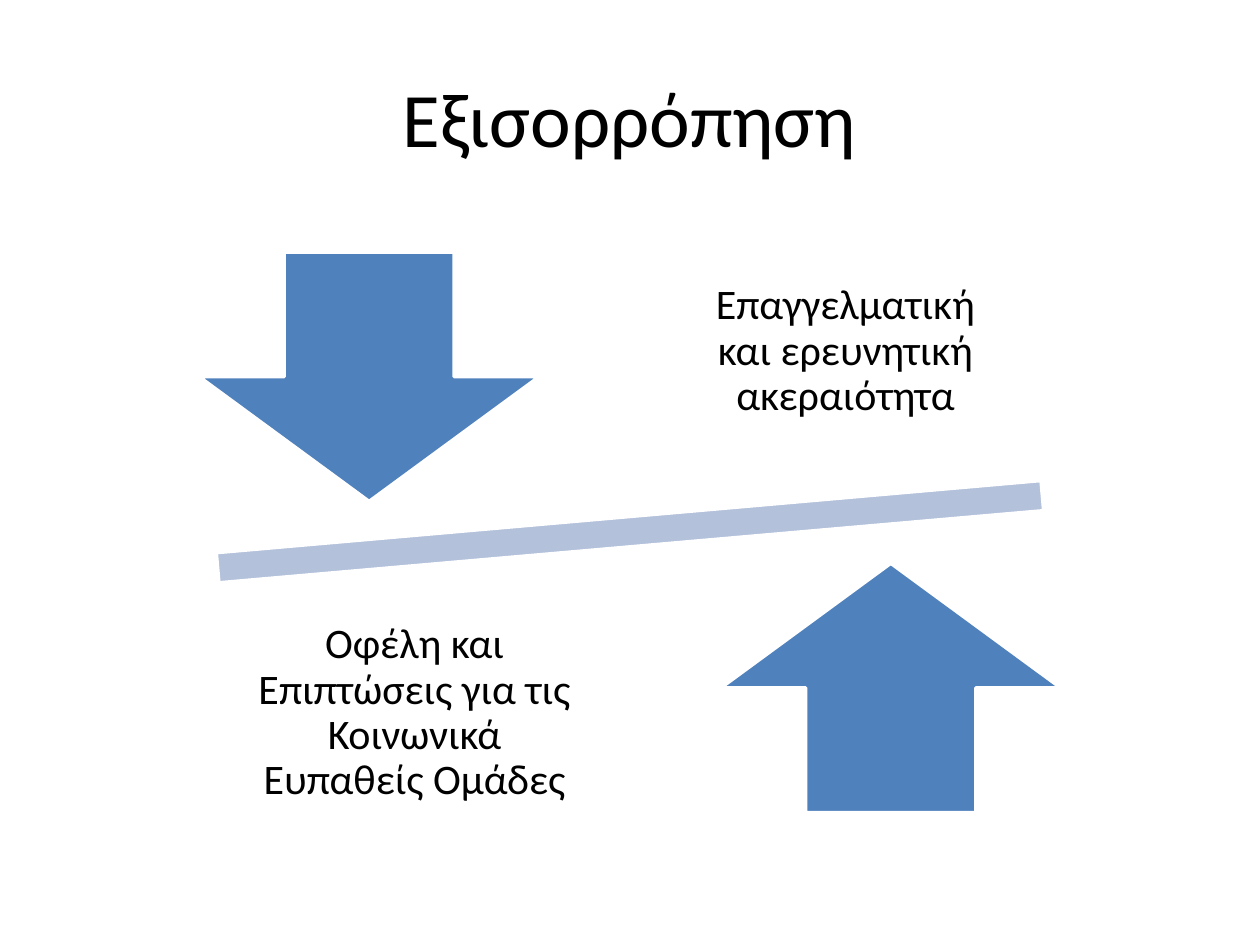
from dataclasses import dataclass

from pptx import Presentation
from pptx.dml.color import RGBColor
from pptx.enum.shapes import MSO_SHAPE
from pptx.enum.text import MSO_ANCHOR, PP_ALIGN
from pptx.slide import Slide
from pptx.util import Inches, Pt

COLORS = {"arrow": "4F81BD", "beam": "B3C1DB", "outline": "FFFFFF", "text": "000000"}
FONT = "Calibri"


@dataclass
class Box:
    left: float
    top: float
    width: float
    height: float

    def lengths(self) -> list[Inches]:
        return [Inches(value) for value in (self.left, self.top, self.width, self.height)]


@dataclass
class Figure:
    kind: MSO_SHAPE
    box: Box
    color: str
    rotation: float = 0


@dataclass
class Label:
    text: str
    box: Box


FIGURES = [
    Figure(MSO_SHAPE.MATH_MINUS, Box(0.53, 3.71, 8.94, 1.02), "beam", rotation=355),
    Figure(MSO_SHAPE.DOWN_ARROW, Box(1.58, 2, 2.7, 1.98), "arrow"),
    Figure(MSO_SHAPE.UP_ARROW, Box(5.72, 4.47, 2.7, 1.98), "arrow"),
]

LABELS = [
    Label("Επαγγελματική και ερευνητική ακεραιότητα", Box(5.27, 1.75, 2.88, 2.08)),
    Label("Οφέλη και Επιπτώσεις για τις Κοινωνικά Ευπαθείς Ομάδες", Box(1.85, 4.62, 2.88, 2.08)),
]


def add_figure(slide: Slide, figure: Figure) -> None:
    shape = slide.shapes.add_shape(figure.kind, *figure.box.lengths())
    shape.rotation = figure.rotation
    shape.shadow.inherit = False
    shape.fill.solid()
    shape.fill.fore_color.rgb = RGBColor.from_string(COLORS[figure.color])
    shape.line.color.rgb = RGBColor.from_string(COLORS["outline"])
    shape.line.width = Pt(2)


def add_text(slide: Slide, text: str, box: Box, *, size: float,
             margin: float = 0.1, line_spacing: float = 1.0) -> None:
    frame = slide.shapes.add_textbox(*box.lengths()).text_frame
    frame.word_wrap = True
    frame.vertical_anchor = MSO_ANCHOR.MIDDLE
    frame.margin_left = frame.margin_right = Inches(margin)
    frame.margin_top = frame.margin_bottom = Inches(margin)
    paragraph = frame.paragraphs[0]
    paragraph.text = text
    paragraph.alignment = PP_ALIGN.CENTER
    paragraph.line_spacing = line_spacing
    paragraph.font.name = FONT
    paragraph.font.size = Pt(size)
    paragraph.font.color.rgb = RGBColor.from_string(COLORS["text"])


def main() -> None:
    presentation = Presentation()
    presentation.slide_width = Inches(10)
    presentation.slide_height = Inches(7.5)
    slide = presentation.slides.add_slide(presentation.slide_layouts[6])

    # Title
    add_text(slide, "Εξισορρόπηση", Box(0.5, 0.3, 9, 1.25), size=44)

    # Tilted beam and the two opposing arrows
    for figure in FIGURES:
        add_figure(slide, figure)

    # Labels on either side of the beam
    for label in LABELS:
        add_text(slide, label.text, label.box, size=24, margin=0.19, line_spacing=0.9)

    presentation.save("out.pptx")


if __name__ == "__main__":
    main()
